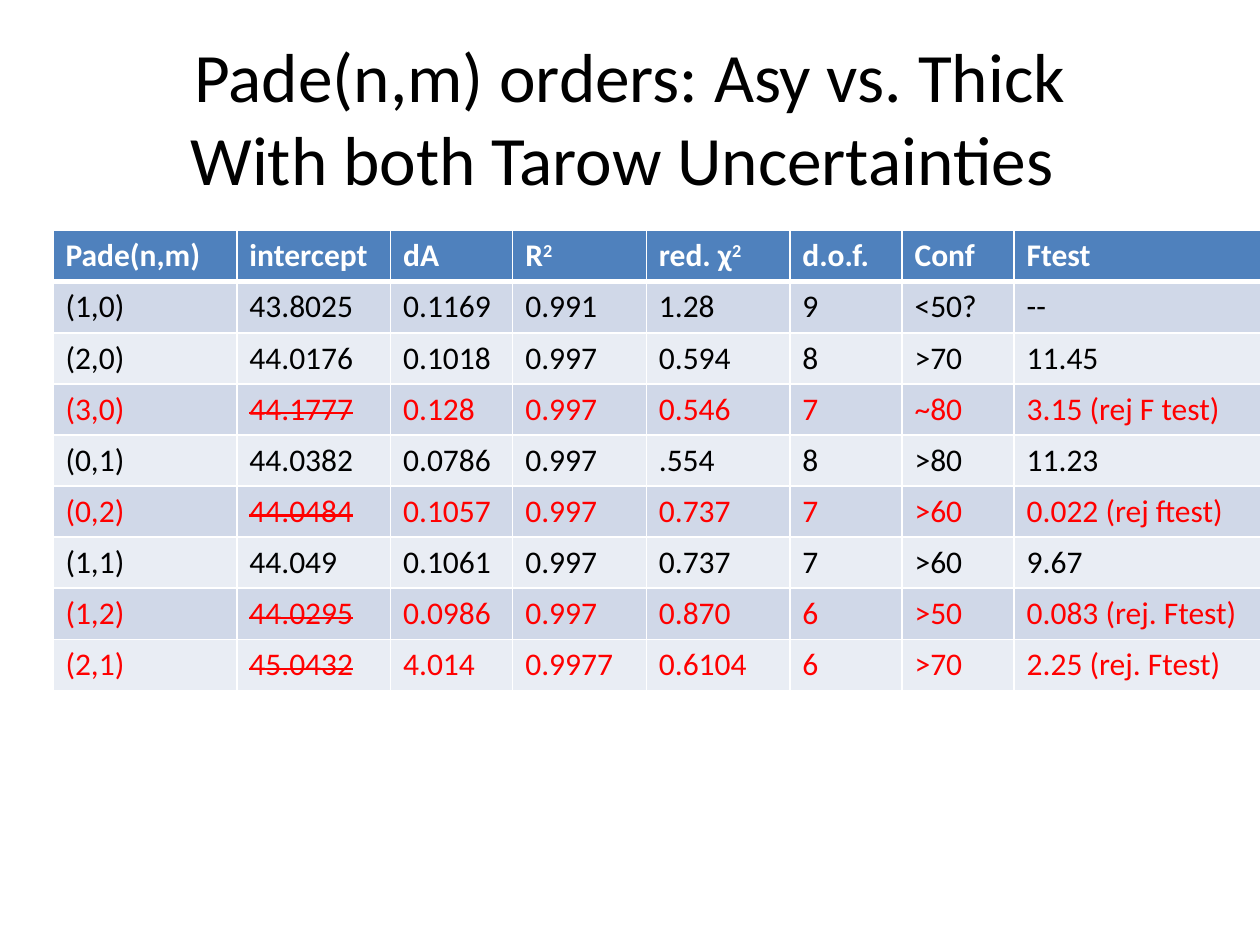
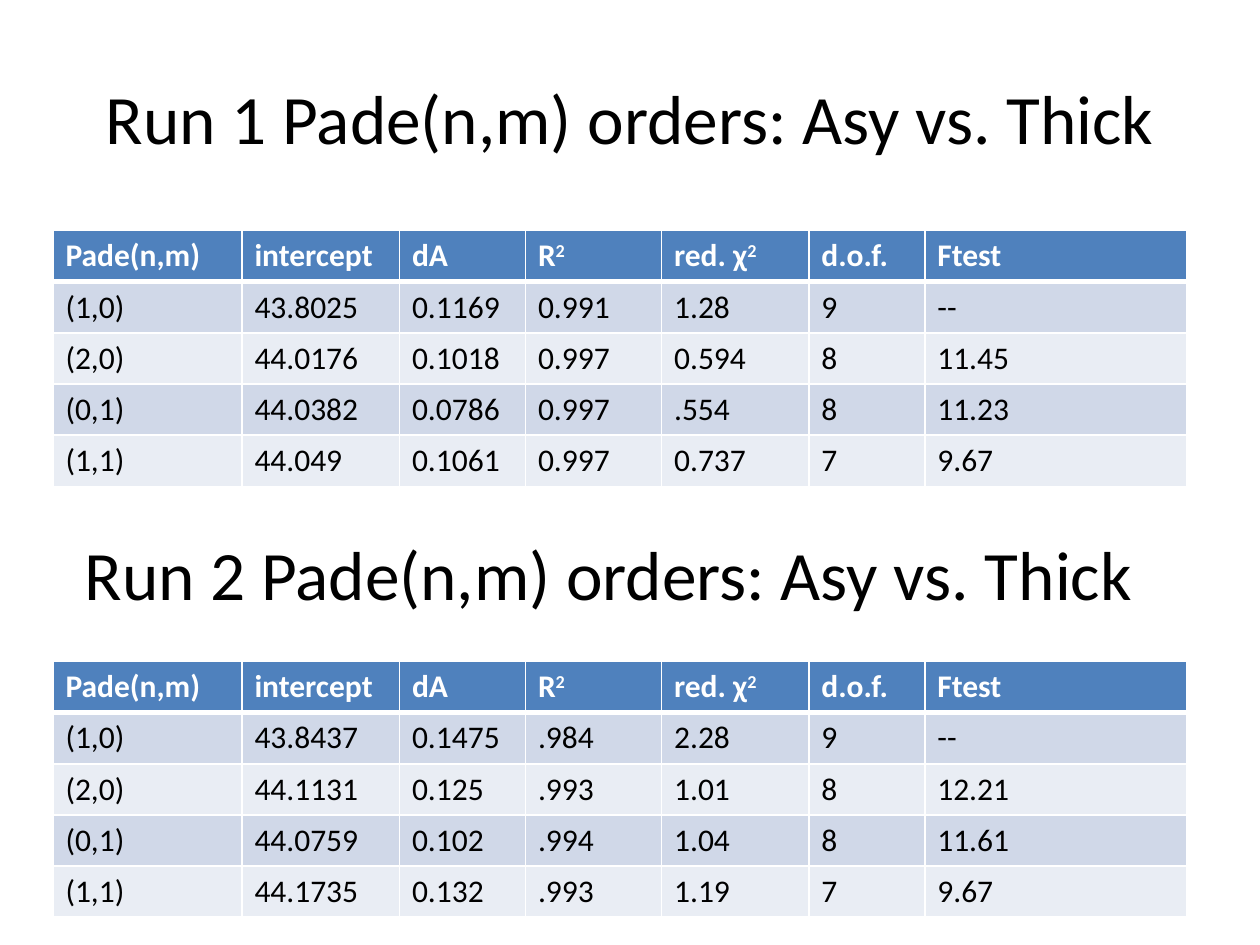
"""Build two slides of Pade fit tables."""
from dataclasses import dataclass
from typing import Any

from lxml import etree
from pptx import Presentation
from pptx import slide as sl
from pptx import util as u
from pptx.dml import color
from pptx.enum import text
from pptx.oxml import ns

SCALE = 9144  # EMU per px, at 100 px to the inch


@dataclass(frozen=True)
class Theme:
    """Colours, font and type sizes of the deck."""
    font: str = "Calibri"
    title: float = 39.6
    body: float = 18
    ink: str = "000000"
    paper: str = "FFFFFF"
    head: str = "4F81BD"
    bands: tuple[str, str] = ("D0D8E8", "E9EDF4")
    reject: str = "FF0000"
    thin: float = 1
    thick: float = 3


@dataclass(frozen=True)
class Box:
    """Place and size in px."""
    left: int
    top: int
    width: int
    height: int

    def emu(self) -> list[u.Emu]:
        """Return the four lengths in EMU."""
        return [u.Emu(n * SCALE) for n in (self.left, self.top, self.width, self.height)]


@dataclass(frozen=True)
class Title:
    """Large centred heading."""
    words: str
    box: Box


@dataclass(frozen=True)
class Fit:
    """One table row of fit results."""
    cells: tuple[str, ...]
    failed: bool = False


@dataclass(frozen=True)
class Grid:
    """Table with its column widths in px."""
    box: Box
    heads: tuple[str, ...]
    widths: tuple[int, ...]
    fits: tuple[Fit, ...]


THEME = Theme()
CONF = 6
TOP = Box(50, 30, 900, 125)
HEADS = ("Pade(n,m)", "intercept", "dA", "R^2", "red. χ^2", "d.o.f.", "Conf", "Ftest")
WIDE = (146, 122, 97, 106, 114, 89, 89, 203)
SLIM = (150, 125, 100, 108, 117, 92, 208)
BOTH = (
    Fit(("(1,0)", "43.8025", "0.1169", "0.991", "1.28", "9", "<50?", "--")),
    Fit(("(2,0)", "44.0176", "0.1018", "0.997", "0.594", "8", ">70", "11.45")),
    Fit(("(3,0)", "44.1777", "0.128", "0.997", "0.546", "7", "~80", "3.15 (rej F test)"), True),
    Fit(("(0,1)", "44.0382", "0.0786", "0.997", ".554", "8", ">80", "11.23")),
    Fit(("(0,2)", "44.0484", "0.1057", "0.997", "0.737", "7", ">60", "0.022 (rej ftest)"), True),
    Fit(("(1,1)", "44.049", "0.1061", "0.997", "0.737", "7", ">60", "9.67")),
    Fit(("(1,2)", "44.0295", "0.0986", "0.997", "0.870", "6", ">50", "0.083 (rej. Ftest)"), True),
    Fit(("(2,1)", "45.0432", "4.014", "0.9977", "0.6104", "6", ">70", "2.25 (rej. Ftest)"), True),
)
SECOND = (
    Fit(("(1,0)", "43.8437", "0.1475", ".984", "2.28", "9", "--")),
    Fit(("(2,0)", "44.1131", "0.125", ".993", "1.01", "8", "12.21")),
    Fit(("(0,1)", "44.0759", "0.102", ".994", "1.04", "8", "11.61")),
    Fit(("(1,1)", "44.1735", "0.132", ".993", "1.19", "7", "9.67")),
)


def trim(cells: tuple[str, ...]) -> tuple[str, ...]:
    """Drop the confidence column."""
    return cells[:CONF] + cells[CONF + 1:]


FIRST = tuple(Fit(trim(fit.cells)) for fit in BOTH if not fit.failed)
SLIDES = (
    (Title("Pade(n,m) orders: Asy vs. Thick\vWith both Tarow Uncertainties ", TOP),
     Grid(Box(42, 183, 967, 365), HEADS, WIDE, BOTH)),
    (Title("Run 1 Pade(n,m) orders: Asy vs. Thick", TOP),
     Grid(Box(42, 183, 900, 203), trim(HEADS), SLIM, FIRST),
     Grid(Box(42, 525, 900, 203), trim(HEADS), SLIM, SECOND),
     Title("Run 2 Pade(n,m) orders: Asy vs. Thick", Box(33, 392, 900, 125))),
)


def dress(item: Any, form: dict[str, Any]) -> None:
    """Set each format value on the item."""
    for name, value in form.items():
        setattr(item, name, value)


def style(font: Any, size: float, tint: str, bold: bool = False) -> None:
    """Give a font its face, size, weight and colour."""
    dress(font, {"name": THEME.font, "size": u.Pt(size), "bold": bold})
    font.color.rgb = color.RGBColor.from_string(tint)


def edge(cell: Any, base: float) -> None:
    """Draw the four borders of a cell."""
    prop = cell._tc.get_or_add_tcPr()
    sides = {"L": THEME.thin, "R": THEME.thin, "T": THEME.thin, "B": base}
    for spot, (side, width) in enumerate(sides.items()):
        line = etree.Element(ns.qn(f"a:ln{side}"), w=str(u.Pt(width)))
        fill = etree.SubElement(line, ns.qn("a:solidFill"))
        etree.SubElement(fill, ns.qn("a:srgbClr"), val=THEME.paper)
        prop.insert(spot, line)


def put(cell: Any, words: str, tint: str, fill: str, head: bool = False,
        strike: bool = False) -> None:
    """Fill one cell; text after a caret is raised."""
    cell.fill.solid()
    cell.fill.fore_color.rgb = color.RGBColor.from_string(fill)
    for raised, part in enumerate(words.split("^")):
        run = cell.text_frame.paragraphs[0].add_run()
        run.text = part
        style(run.font, THEME.body, tint, head)
        prop = run._r.get_or_add_rPr()
        if raised:
            prop.set("baseline", "30000")
        if strike:
            prop.set("strike", "sngStrike")
    edge(cell, THEME.thick if head else THEME.thin)


def title(page: sl.Slide, item: Title) -> None:
    """Draw a heading."""
    frame = page.shapes.add_textbox(*item.box.emu()).text_frame
    dress(frame, {"word_wrap": True, "vertical_anchor": text.MSO_ANCHOR.MIDDLE,
                  "text": item.words})
    para = frame.paragraphs[0]
    para.alignment = text.PP_ALIGN.CENTER
    for run in para.runs:
        style(run.font, THEME.title, THEME.ink)


def grid(page: sl.Slide, item: Grid) -> None:
    """Draw a table with a header and banded rows."""
    count = len(item.fits) + 1
    table = page.shapes.add_table(count, len(item.heads), *item.box.emu()).table
    for col, width in zip(table.columns, item.widths):
        col.width = u.Emu(width * SCALE)
    for row in table.rows:
        row.height = u.Emu(item.box.height * SCALE // count)
    for col, words in enumerate(item.heads):
        put(table.cell(0, col), words, THEME.paper, THEME.head, head=True)
    for row, fit in enumerate(item.fits):
        tint = THEME.reject if fit.failed else THEME.ink
        for col, words in enumerate(fit.cells):
            put(table.cell(row + 1, col), words, tint, THEME.bands[row % 2],
                strike=fit.failed and item.heads[col] == "intercept")


def main() -> None:
    """Build and save the deck."""
    deck = Presentation()
    dress(deck, {"slide_width": u.Emu(1000 * SCALE), "slide_height": u.Emu(750 * SCALE)})
    draw = {Title: title, Grid: grid}
    for items in SLIDES:
        page = deck.slides.add_slide(deck.slide_layouts[6])
        for item in items:
            draw[type(item)](page, item)
    deck.save("out.pptx")


if __name__ == "__main__":
    main()
